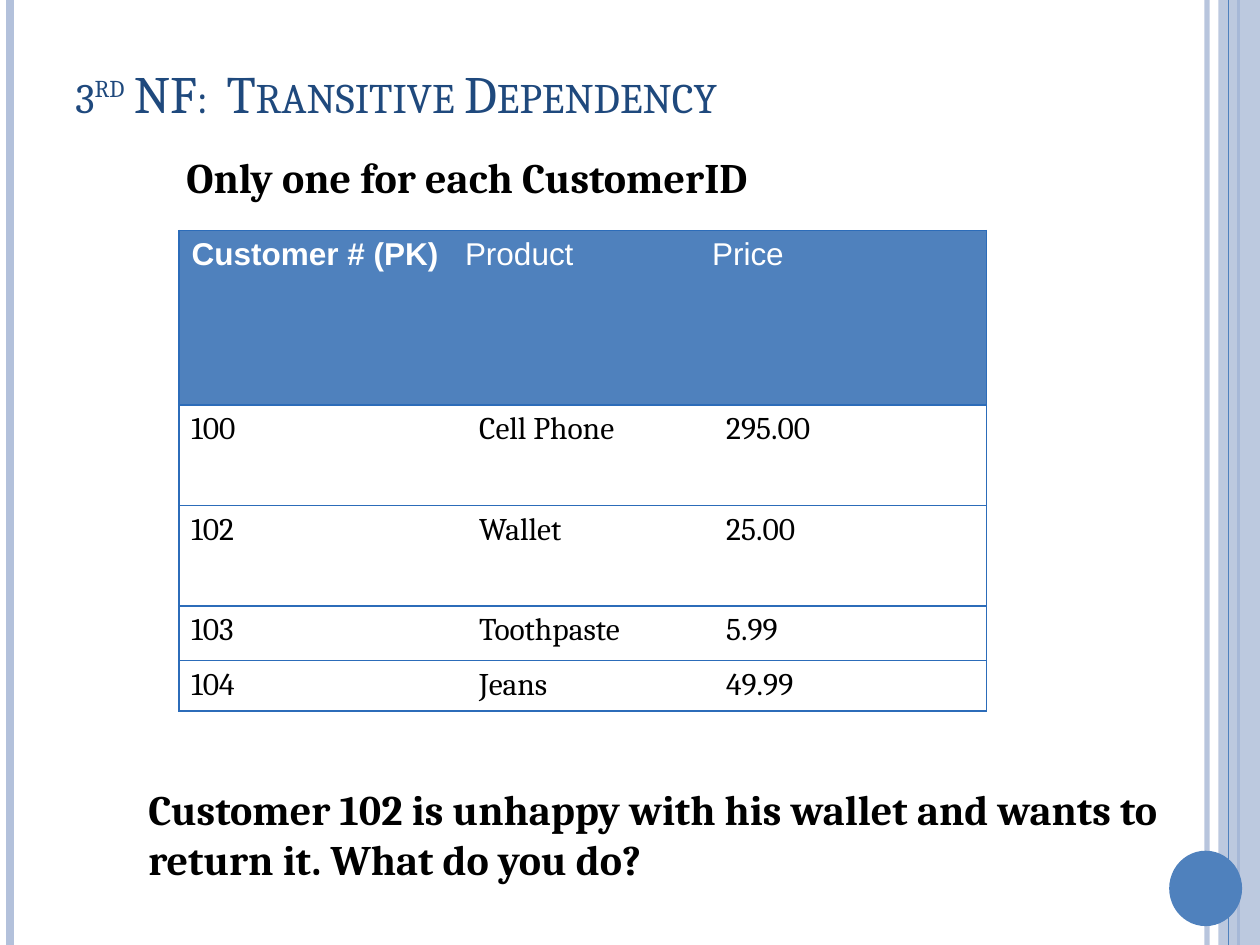
from dataclasses import dataclass

from lxml import etree
from pptx import Presentation
from pptx.dml.color import RGBColor
from pptx.enum import shapes, text
from pptx.oxml import ns
from pptx.util import Cm, Pt


@dataclass(frozen=True)
class Theme:
    accent: str = "4F81BD"
    pale: str = "B3C1DB"
    border: str = "2C6CB9"
    heading: str = "1F497D"
    ink: str = "000000"
    white: str = "FFFFFF"
    serif: str = "Cambria"
    sans: str = "Arial"
    title_size: int = 30
    statement_size: int = 24
    cell_size: int = 18


THEME = Theme()
PAGE_W, PAGE_H = 25.4, 19.05


def rgb(code):
    return RGBColor.from_string(code)


def add_alpha(shape, percent):
    """Make the first colour of a shape partly transparent."""
    colour = next(shape._element.spPr.iter(ns.qn("a:srgbClr")))
    etree.SubElement(colour, ns.qn("a:alpha")).set("val", str(percent * 1000))


def add_run(paragraph, words, size, font, colour, bold=False):
    run = paragraph.add_run()
    run.text = words
    run.font.size, run.font.name, run.font.bold = Pt(size), font, bold
    run.font.color.rgb = rgb(colour)
    return run


def add_frame(slide, box, anchor=text.MSO_ANCHOR.TOP):
    frame = slide.shapes.add_textbox(*map(Cm, box)).text_frame
    frame.word_wrap = True
    frame.vertical_anchor = anchor
    return frame


# Decoration: rails along both edges, side band and disc
def add_rail(slide, x, top, height, colour, width, alpha=None):
    rail = slide.shapes.add_connector(
        shapes.MSO_CONNECTOR.STRAIGHT, Cm(x), Cm(top), Cm(x), Cm(top + height))
    rail.line.color.rgb = rgb(colour)
    rail.line.width = Pt(width)
    etree.SubElement(rail._element.spPr, ns.qn("a:effectLst"))
    if alpha:
        add_alpha(rail, alpha)


def add_solid(slide, kind, box, colour):
    solid = slide.shapes.add_shape(kind, *map(Cm, box))
    solid.shadow.inherit = False
    solid.fill.solid()
    solid.fill.fore_color.rgb = rgb(colour)
    solid.line.fill.background()
    return solid


def add_decoration(slide, box):
    left, top, width, height = box
    right = left + width
    add_rail(slide, right - 1.07, top, height, THEME.pale, 3, 93)
    add_rail(slide, left + 0.2, top, height, THEME.pale, 4.5)
    add_rail(slide, right - 0.43, top, height, THEME.accent, 1.5)
    band = add_solid(slide, shapes.MSO_SHAPE.RECTANGLE,
                     (right - 0.84, top, 0.84, height), THEME.pale)
    add_alpha(band, 87)
    add_rail(slide, right - 0.63, top, height, THEME.accent, 0.75)
    add_solid(slide, shapes.MSO_SHAPE.OVAL,
              (right - 1.83, top + height - 1.9, 1.47, 1.52), THEME.accent)


# Title in small capitals, with a raised ordinal
def add_title(slide, box):
    paragraph = add_frame(slide, box, text.MSO_ANCHOR.MIDDLE).paragraphs[0]
    for words, raised in (("3", 0), ("rd", 30), (" NF:  Transitive Dependency", 0)):
        run = add_run(paragraph, words, THEME.title_size, THEME.serif, THEME.heading)
        properties = run._r.get_or_add_rPr()
        properties.set("cap", "small")
        if raised:
            properties.set("baseline", str(raised * 1000))


# Bold statement above or below the table
def add_statement(slide, box, words):
    paragraph = add_frame(slide, box).paragraphs[0]
    add_run(paragraph, words, THEME.statement_size, THEME.serif, THEME.ink, True)


# Table ruled between rows and around the outside only
def set_borders(cell, visible):
    properties = cell._tc.get_or_add_tcPr()
    for place, side in enumerate("LRTB"):
        edge = etree.Element(ns.qn(f"a:ln{side}"), w=str(Pt(1)))
        if side in visible:
            fill = etree.SubElement(edge, ns.qn("a:solidFill"))
            etree.SubElement(fill, ns.qn("a:srgbClr"), val=THEME.border)
        else:
            etree.SubElement(edge, ns.qn("a:noFill"))
        properties.insert(place, edge)


def add_orders(slide, box, orders, col_widths, row_heights):
    table = slide.shapes.add_table(
        len(orders), len(col_widths), *map(Cm, box)).table
    table.horz_banding = False
    for column, width in zip(table.columns, col_widths):
        column.width = Cm(width)
    for row, height in zip(table.rows, row_heights):
        row.height = Cm(height)
    last = len(col_widths) - 1
    for r, order in enumerate(orders):
        for c, words in enumerate(order):
            cell = table.cell(r, c)
            paragraph = cell.text_frame.paragraphs[0]
            if r == 0:
                cell.fill.solid()
                cell.fill.fore_color.rgb = rgb(THEME.accent)
                add_run(paragraph, words, THEME.cell_size, THEME.sans,
                        THEME.white, c == 0)
            else:
                cell.fill.background()
                cell.margin_left = Cm(0.54 if c else 0.25)
                add_run(paragraph, words, THEME.cell_size, THEME.serif, THEME.ink)
            set_borders(cell, "TB" + "L" * (c == 0) + "R" * (c == last))


def main():
    deck = Presentation()
    deck.slide_width, deck.slide_height = Cm(PAGE_W), Cm(PAGE_H)
    slide = deck.slides.add_slide(deck.slide_layouts[6])

    orders = [
        ("Customer # (PK)", "Product", "Price"),
        ("100", "Cell Phone", "295.00"),
        ("102", "Wallet", "25.00"),
        ("103", "Toothpaste", "5.99"),
        ("104", "Jeans", "49.99"),
    ]
    col_widths = (5.51, 4.98, 5.79)
    row_heights = (3.51, 2.03, 2.03, 1.1, 0.99)

    add_decoration(slide, (0, 0, PAGE_W, PAGE_H))
    add_title(slide, (1.27, 0.76, 22.02, 2.21))
    add_statement(slide, (3.51, 2.92, 15.24, 1.32), "Only one for each CustomerID")
    add_orders(slide, (3.61, 4.65, sum(col_widths), sum(row_heights)),
               orders, col_widths, row_heights)
    add_statement(slide, (2.74, 15.67, 21.16, 2.36),
                  "Customer 102 is unhappy with his wallet and wants to "
                  "return it. What do you do?")
    deck.save("out.pptx")


if __name__ == "__main__":
    main()
